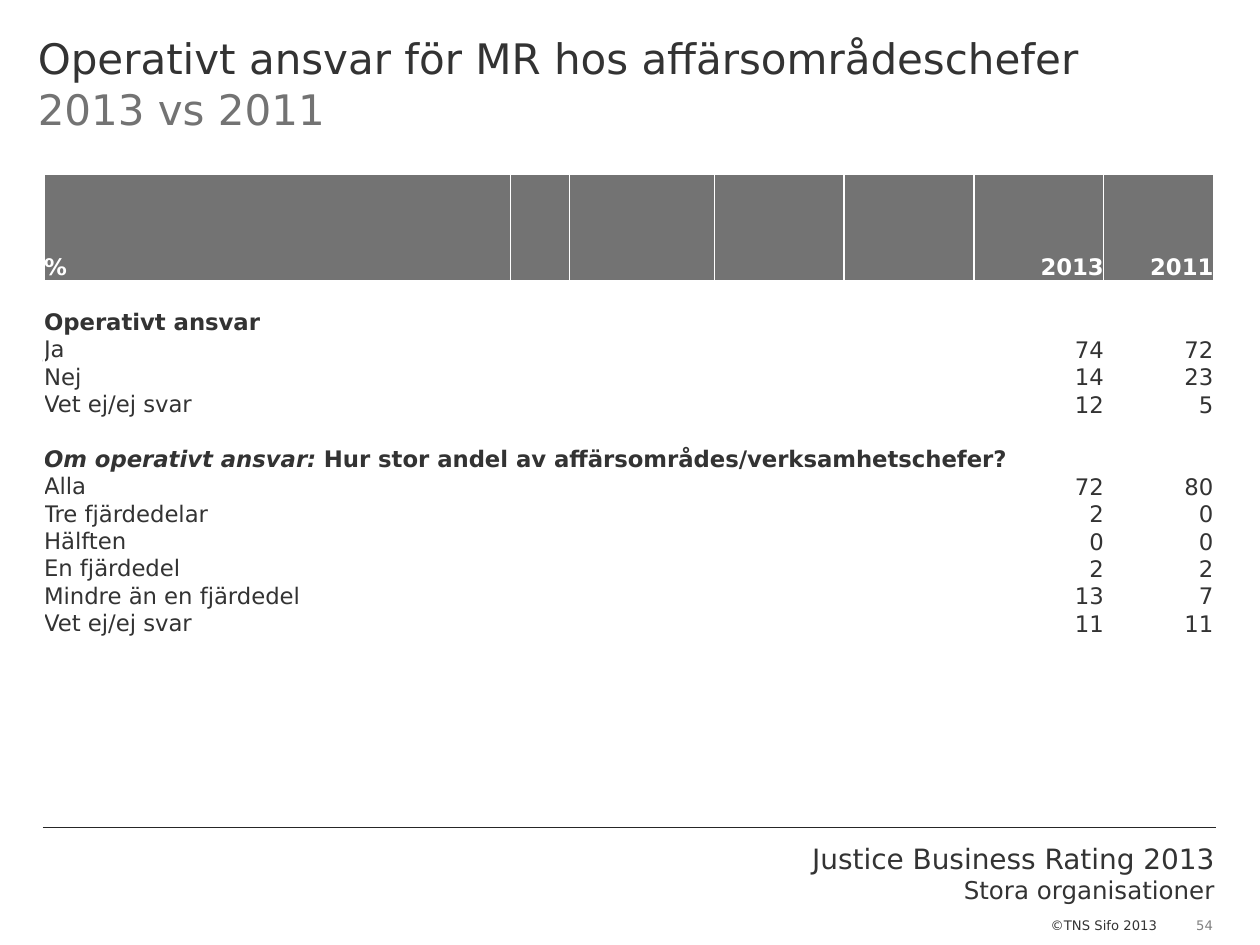
import pptx
import pptx.dml.color
import pptx.enum.shapes
import pptx.enum.text
import pptx.oxml
import pptx.util

FONT = "DejaVu Sans"
DARK, GREY, WHITE = "333333", "737373", "FFFFFF"
WIDTH, HEIGHT = pptx.util.Inches(10), pptx.util.Inches(7.5)
LEFT = pptx.enum.text.PP_ALIGN.LEFT
CENTER = pptx.enum.text.PP_ALIGN.CENTER
RIGHT = pptx.enum.text.PP_ALIGN.RIGHT
COLUMNS = [37, 4.7, 11.5, 10.3, 10.3, 10.3, 8.7]
HEADER_HEIGHT, ROW_HEIGHT = 11.33, 2.88
ROWS = [
    ("%", "2013", "2011"),
    (),
    ("Operativt ansvar",),
    ("Ja", "74", "72"),
    ("Nej", "14", "23"),
    ("Vet ej/ej svar", "12", "5"),
    (),
    ("Om operativt ansvar: ", "Hur stor andel av affärsområdes/verksamhetschefer?"),
    ("Alla", "72", "80"),
    ("Tre fjärdedelar", "2", "0"),
    ("Hälften", "0", "0"),
    ("En fjärdedel", "2", "2"),
    ("Mindre än en fjärdedel", "13", "7"),
    ("Vet ej/ej svar", "11", "11"),
]
HEADER, HEADING, QUESTION = 0, 2, 7


def color(value):
    """Turn a hex string into a colour."""
    return pptx.dml.color.RGBColor.from_string(value)


def across(percent):
    """Return a share of the slide's width."""
    return round(WIDTH * percent / 100)


def down(percent):
    """Return a share of the slide's height."""
    return round(HEIGHT * percent / 100)


def style(paragraph, size, tint, align=LEFT, bold=False):
    """Set the font and alignment of a whole paragraph."""
    paragraph.alignment = align
    font = paragraph.font
    font.name, font.size, font.bold = FONT, pptx.util.Pt(size), bold
    font.color.rgb = color(tint)


def add_text(slide, place, lines, align=LEFT, insets=(0.1, 0.05, 0.1, 0.05), wrap=True):
    """Add a text box with one paragraph per (text, size, colour) line."""
    left, top, width, height = place
    box = slide.shapes.add_textbox(across(left), down(top), across(width), down(height))
    frame = box.text_frame
    frame.word_wrap = wrap
    frame.margin_left, frame.margin_top, frame.margin_right, frame.margin_bottom = map(
        pptx.util.Inches, insets)
    for index, (text, size, tint) in enumerate(lines):
        paragraph = frame.add_paragraph() if index else frame.paragraphs[0]
        paragraph.text = text
        style(paragraph, size, tint, align)


def add_rule(slide, left, right, top):
    """Add the thin line above the footer."""
    rule = slide.shapes.add_connector(
        pptx.enum.shapes.MSO_CONNECTOR.STRAIGHT,
        across(left), down(top), across(right), down(top))
    rule.line.color.rgb = color("262626")
    rule.line.width = pptx.util.Pt(0.75)
    rule._element.spPr.append(pptx.oxml.parse_xml(
        '<a:effectLst xmlns:a="http://schemas.openxmlformats.org/drawingml/2006/main"/>'))


def prepare_cell(cell, is_header):
    """Clear a cell's margins, fill it and fix the height of its empty line."""
    cell.margin_left = cell.margin_right = cell.margin_top = cell.margin_bottom = 0
    cell.vertical_anchor = pptx.enum.text.MSO_ANCHOR.BOTTOM
    if is_header:
        cell.fill.solid()
        cell.fill.fore_color.rgb = color(GREY)
    else:
        cell.fill.background()
    paragraph = cell.text_frame.paragraphs[0]
    style(paragraph, 13, DARK)
    paragraph._p.get_or_add_endParaRPr().set("sz", "1300")


def fill_row(table, row, values):
    """Write a label in the first column and figures in the last two."""
    is_header = row == HEADER
    tint = WHITE if is_header else DARK
    for column, value in zip((0, 5, 6), values):
        paragraph = table.cell(row, column).text_frame.paragraphs[0]
        paragraph.add_run().text = value
        style(paragraph, 13, tint, RIGHT if column else LEFT, row in (HEADER, HEADING))
        if column and not is_header:
            paragraph.line_spacing = 0.9


def fill_question(table, row, values):
    """Write the follow-up question across the whole row."""
    table.cell(row, 0).merge(table.cell(row, len(COLUMNS) - 1))
    paragraph = table.cell(row, 0).text_frame.paragraphs[0]
    style(paragraph, 13, DARK, bold=True)
    for value, italic in zip(values, (True, False)):
        run = paragraph.add_run()
        run.text, run.font.italic = value, italic


def add_results(slide):
    """Add the table of survey results."""
    heights = [HEADER_HEIGHT] + [ROW_HEIGHT] * (len(ROWS) - 1)
    table = slide.shapes.add_table(
        len(ROWS), len(COLUMNS), across(3.5), down(18.4),
        across(sum(COLUMNS)), down(sum(heights))).table
    table.first_row = table.horz_banding = False
    for column, width in zip(table.columns, COLUMNS):
        column.width = across(width)
    for row, (values, height) in enumerate(zip(ROWS, heights)):
        table.rows[row].height = down(height)
        for cell in table.rows[row].cells:
            prepare_cell(cell, row == HEADER)
        fill = fill_question if row == QUESTION else fill_row
        fill(table, row, values)


def main():
    """Build the slide and save it."""
    presentation = pptx.Presentation()
    presentation.slide_width, presentation.slide_height = WIDTH, HEIGHT
    slide = presentation.slides.add_slide(presentation.slide_layouts[6])
    add_text(slide, (94.7, 97.07, 1.8, 1.73), [("54", 7.5, "808080")],
             CENTER, (0, 0, 0, 0), wrap=False)
    add_rule(slide, 3.4, 96.5, 87.6)
    add_text(slide, (51.6, 88.4, 45.8, 8.13),
             [("Justice Business Rating 2013", 16, DARK),
              ("Stora organisationer", 14, DARK)], RIGHT)
    add_text(slide, (82.4, 96.4, 11, 3.07), [("©TNS Sifo 2013", 7.5, DARK)])
    add_text(slide, (0, 0, 100, 15.47),
             [("Operativt ansvar för MR hos affärsområdeschefer", 24, DARK),
              ("2013 vs 2011", 24, GREY)], insets=(0.3, 0.26, 0.3, 0))
    add_results(slide)
    presentation.save("out.pptx")


if __name__ == "__main__":
    main()
